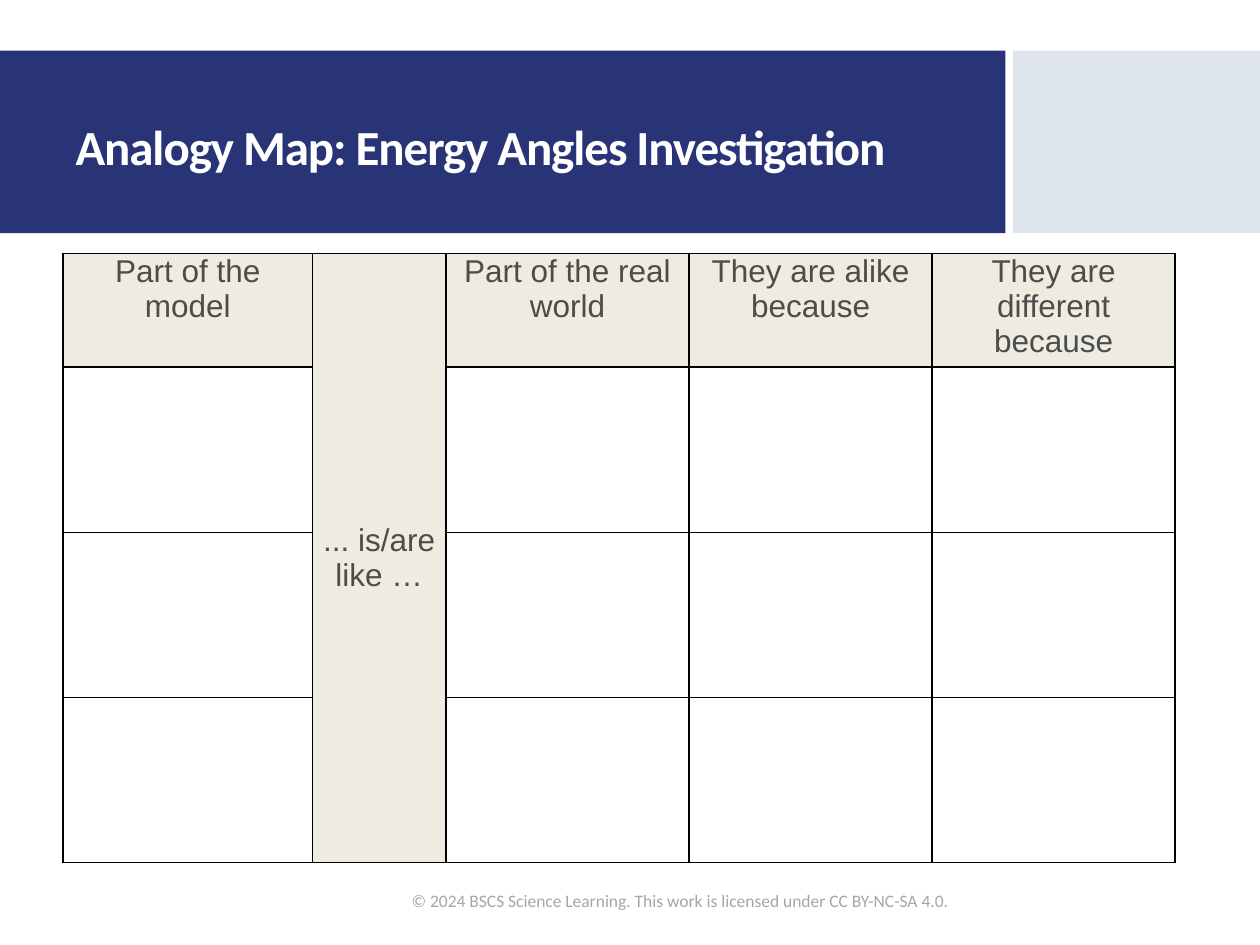
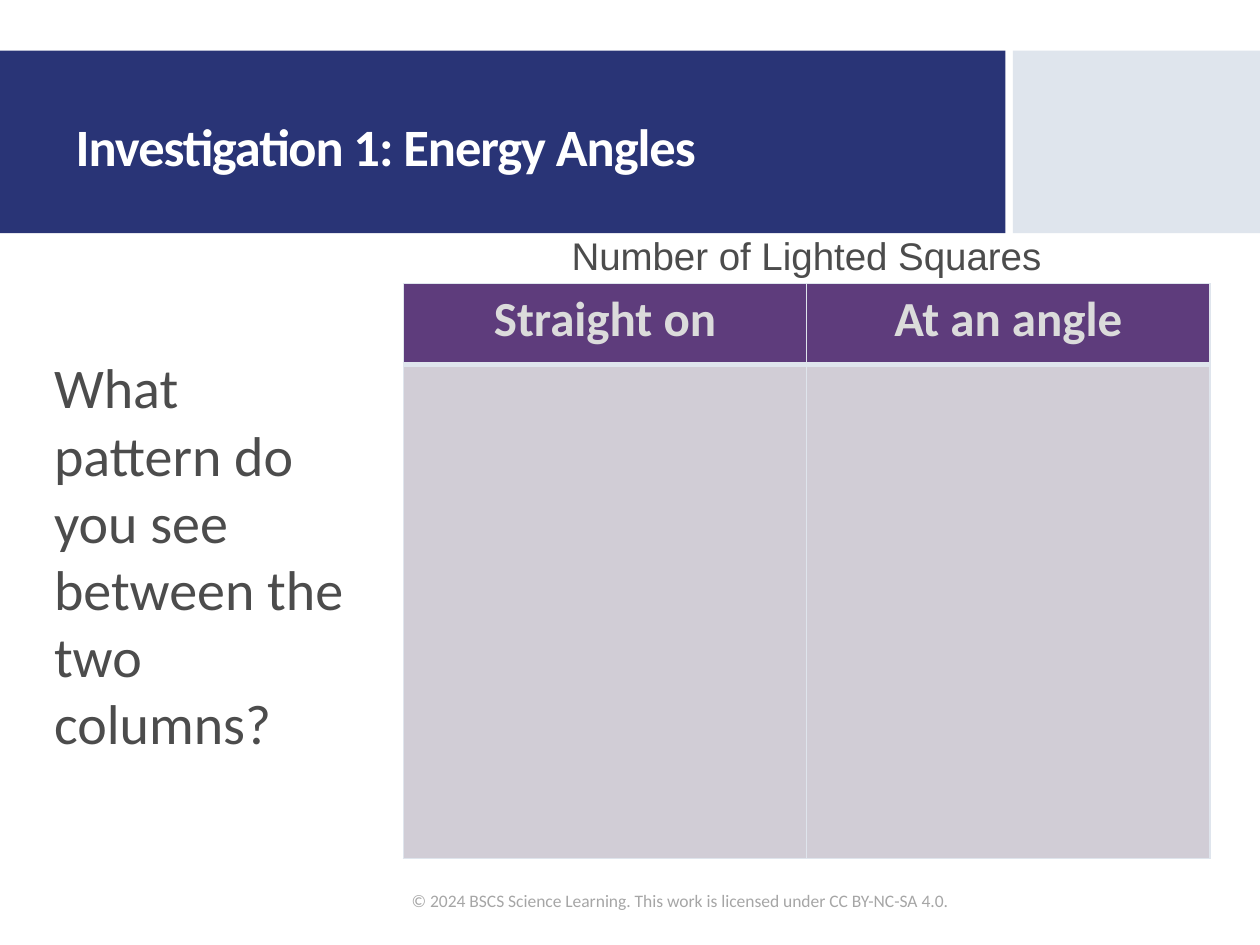
"""Build two classroom slides: an analogy map and an investigation table."""
from lxml import etree
from pptx import Presentation
from pptx.dml.color import RGBColor
from pptx.enum.shapes import MSO_SHAPE
from pptx.enum.text import MSO_ANCHOR, MSO_AUTO_SIZE, PP_ALIGN
from pptx.oxml.ns import qn
from pptx.util import Cm, Pt

RECT = MSO_SHAPE.RECTANGLE
TOP, MIDDLE = MSO_ANCHOR.TOP, MSO_ANCHOR.MIDDLE
LEFT, CENTER = PP_ALIGN.LEFT, PP_ALIGN.CENTER
NO_FIT = MSO_AUTO_SIZE.NONE

NAVY, PALE, WHITE, BLACK = "293476", "DFE5ED", "FFFFFF", "000000"
TEXT, GREY, SAND = "4C4C4C", "A6A6A6", "EEECE1"
PURPLE, LILAC, SILVER = "5E3C7C", "D1CDD6", "DBDBDB"
BAND_TOP, BAND_HEIGHT = 1.02, 3.68
BANDS = [(0, 20.27, NAVY), (20.42, 4.98, PALE)]
FOOTER = ("© 2024 BSCS Science Learning. "
          "This work is licensed under CC BY-NC-SA 4.0.")


def rgb(color):
    """Turn a hex string into a colour."""
    return RGBColor.from_string(color)


def box(x, y, w, h):
    """Turn four numbers into lengths."""
    return Cm(x), Cm(y), Cm(w), Cm(h)


def write(tf, text, size, font, color, bold=False, align=LEFT):
    """Write one formatted run into the first paragraph and return it."""
    p = tf.paragraphs[0]
    p.alignment = align
    r = p.add_run()
    r.text = text
    r.font.size = Pt(size)
    r.font.name = font
    r.font.bold = bold
    r.font.color.rgb = rgb(color)
    return r


def add_text(slide, place, text, size, font, color, align=LEFT, anchor=TOP):
    """Add a wrapping text box."""
    tf = slide.shapes.add_textbox(*box(*place)).text_frame
    tf.word_wrap = True
    tf.vertical_anchor = anchor
    write(tf, text, size, font, color, align=align)


def add_band(slide, x, width, color):
    """Add one band of the header behind the title."""
    sp = slide.shapes.add_shape(RECT, *box(x, BAND_TOP, width, BAND_HEIGHT))
    sp.shadow.inherit = False
    sp.fill.solid()
    sp.fill.fore_color.rgb = rgb(color)
    sp.line.fill.background()


def add_title(slide, text, size):
    """Place and format the title in front of the bands."""
    title = slide.shapes.title
    title.left, title.top, title.width, title.height = box(1.27, 1.47, 17.6, 3.1)
    tf = title.text_frame
    tf.auto_size = NO_FIT
    tf.word_wrap = True
    tf.vertical_anchor = MIDDLE
    r = write(tf, text, size, "Calibri", WHITE, bold=True)
    r._r.get_or_add_rPr().set("spc", "-60")
    tf.paragraphs[0].line_spacing = 0.9
    slide.shapes._spTree.append(title._element)


def add_slide(prs, title, size):
    """Add a slide with bands, title and footer."""
    slide = prs.slides.add_slide(prs.slide_layouts[5])
    for band in BANDS:
        add_band(slide, *band)
    add_title(slide, title, size)
    add_text(slide, (8.05, 17.65, 12.32, 1.02), FOOTER, 10, "Calibri", GREY,
             anchor=MIDDLE)
    return slide


def add_table(slide, x, y, widths, heights):
    """Add an unbanded table with the given columns and rows."""
    place = box(x, y, sum(widths), sum(heights))
    table = slide.shapes.add_table(len(heights), len(widths), *place).table
    table.first_row = table.horz_banding = False
    for column, width in zip(table.columns, widths):
        column.width = Cm(width)
    for row, height in zip(table.rows, heights):
        row.height = Cm(height)
    return table


def style_cell(cell, fill, color, top=1, bottom=1):
    """Set the fill and the four borders of a cell."""
    if fill:
        cell.fill.solid()
        cell.fill.fore_color.rgb = rgb(fill)
    else:
        cell.fill.background()
    tc_pr = cell._tc.get_or_add_tcPr()
    sides = [("L", 1), ("R", 1), ("T", top), ("B", bottom)]
    for i, (side, width) in enumerate(sides):
        ln = etree.Element(qn(f"a:ln{side}"), w=str(Pt(width)))
        solid = etree.SubElement(ln, qn("a:solidFill"))
        etree.SubElement(solid, qn("a:srgbClr"), val=color)
        tc_pr.insert(i, ln)


def add_analogy_map(slide):
    """Add the analogy map with its merged link column."""
    headers = ["Part of the model", "... is/are like …",
               "Part of the real world", "They are alike because",
               "They are different because"]
    link = 1
    table = add_table(slide, 1.27, 5.11, [5.03, 2.69] + [4.9] * 3,
                      [2.29] + [3.33] * 3)
    for i, row in enumerate(table.rows):
        for j, cell in enumerate(row.cells):
            style_cell(cell, SAND if i == 0 or j == link else None, BLACK)
    table.cell(0, link).merge(table.cell(3, link))
    for j, header in enumerate(headers):
        cell = table.cell(0, j)
        cell.margin_left = cell.margin_right = Cm(0.18)
        cell.margin_top = cell.margin_bottom = 0
        cell.vertical_anchor = MIDDLE if j == link else TOP
        write(cell.text_frame, header, 18, "Arial", TEXT, align=CENTER)


def add_squares_table(slide):
    """Add the table for counting lighted squares."""
    table = add_table(slide, 8.13, 5.72, [8.13] * 2, [1.63, 9.96])
    for j, header in enumerate(["Straight on", "At an angle"]):
        head, body = table.cell(0, j), table.cell(1, j)
        style_cell(head, PURPLE, PALE, bottom=3)
        style_cell(body, LILAC, PALE, top=3)
        write(head.text_frame, header, 28, "Calibri", SILVER, bold=True,
              align=CENTER)


def main():
    """Build and save the presentation."""
    prs = Presentation()
    prs.slide_width, prs.slide_height = Cm(25.4), Cm(19.05)

    slide = add_slide(prs, "Analogy Map: Energy Angles Investigation", 28)
    add_analogy_map(slide)

    slide = add_slide(prs, "Investigation 1: Energy Angles", 30)
    add_squares_table(slide)
    add_text(slide, (0.84, 6.99, 6.6, 8.46),
             "What pattern do you see between the two columns?",
             32, "Calibri", TEXT)
    add_text(slide, (10.29, 4.55, 11.94, 1.19), "Number of Lighted Squares",
             22, "Arial", TEXT, align=CENTER)

    prs.save("out.pptx")


if __name__ == "__main__":
    main()
